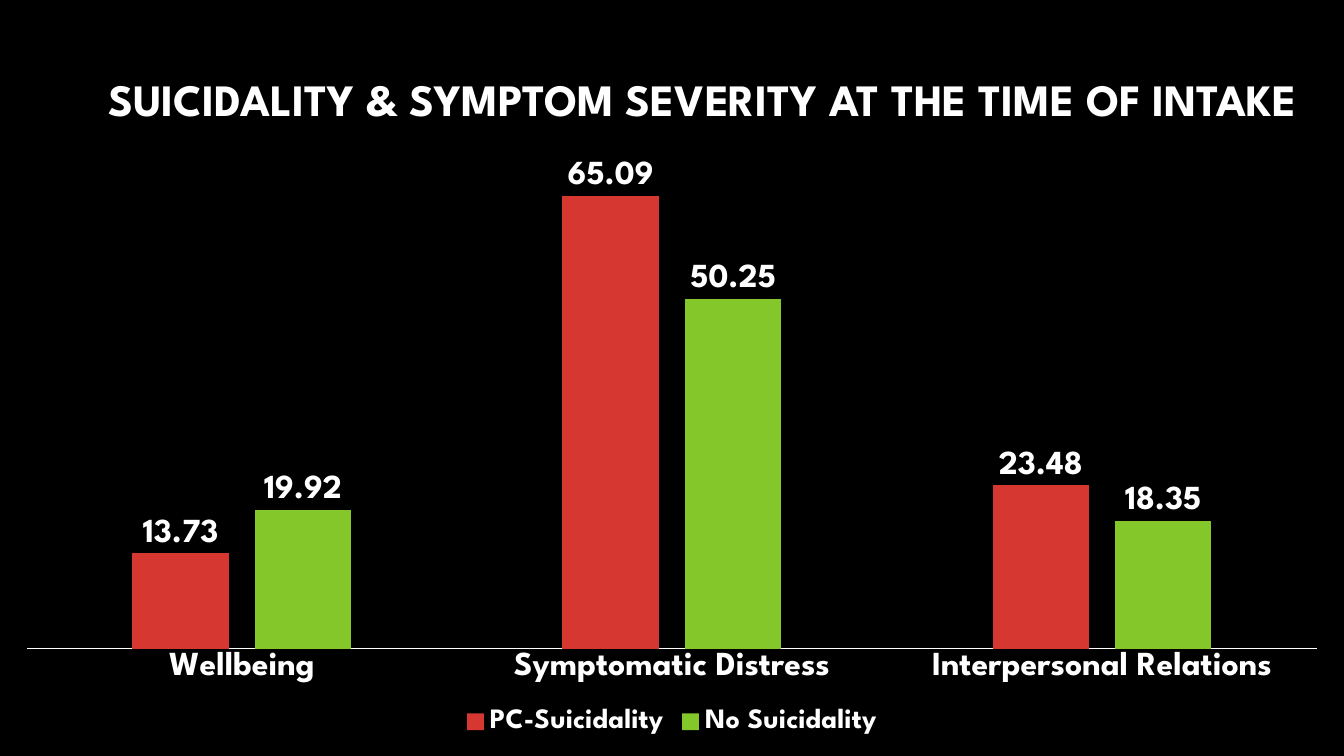
from lxml.etree import SubElement
from pptx import Presentation
from pptx.chart.data import CategoryChartData
from pptx.dml.color import RGBColor
from pptx.enum.chart import XL_CHART_TYPE, XL_LABEL_POSITION, XL_LEGEND_POSITION, XL_TICK_MARK
from pptx.enum.text import MSO_ANCHOR, MSO_AUTO_SIZE, PP_ALIGN
from pptx.oxml.ns import qn
from pptx.util import Cm, Pt

FONT = "League Spartan"
COLOURS = {"background": "000000", "text": "FFFFFF", "suicidality": "D63731", "none": "84C72A"}
CATEGORIES = ["Wellbeing", "Symptomatic Distress", "Interpersonal Relations"]
SERIES = [
    ("PC-Suicidality", [13.73, 65.09, 23.48], "suicidality"),
    ("No Suicidality", [19.92, 50.25, 18.35], "none"),
]


def colour(name):
    return RGBColor.from_string(COLOURS[name])


def style_font(font, size):
    font.name = FONT
    font.size = Pt(size)
    font.bold = True
    font.color.rgb = colour("text")


def add_title(slide, box, text):
    title = slide.shapes.title
    title.left, title.top, title.width, title.height = box
    frame = title.text_frame
    frame.text = text
    frame.word_wrap = True
    frame.auto_size = MSO_AUTO_SIZE.NONE
    frame.vertical_anchor = MSO_ANCHOR.MIDDLE
    para = frame.paragraphs[0]
    para.alignment = PP_ALIGN.RIGHT
    para.line_spacing = 0.9
    style_font(para.runs[0].font, 32)


def place_plot(chart, **fractions):
    plot_area = chart.plots[0]._element.getparent()
    layout = plot_area.find(qn("c:layout"))
    if layout is None:
        layout = SubElement(plot_area, qn("c:layout"))
        plot_area.insert(0, layout)
    manual = SubElement(layout, qn("c:manualLayout"))
    settings = {"layoutTarget": "inner", "xMode": "edge", "yMode": "edge", **fractions}
    for name, value in settings.items():
        SubElement(manual, qn(f"c:{name}")).set("val", str(value))


def add_severity_chart(slide, box):
    data = CategoryChartData(number_format="0.00")
    data.categories = CATEGORIES
    for name, values, _ in SERIES:
        data.add_series(name, values)
    chart = slide.shapes.add_chart(XL_CHART_TYPE.COLUMN_CLUSTERED, *box, data).chart
    style_font(chart.font, 20)
    chart.has_title = False
    chart.has_legend = True
    chart.legend.position = XL_LEGEND_POSITION.BOTTOM
    chart.legend.include_in_layout = False
    style_font(chart.legend.font, 20)

    scale = chart.value_axis
    scale.minimum_scale, scale.maximum_scale = 0, 70
    scale.has_major_gridlines = False
    scale.visible = False
    axis = chart.category_axis
    axis.major_tick_mark = XL_TICK_MARK.NONE
    axis.format.line.color.rgb = colour("text")
    axis.format.line.width = Pt(0.75)
    style_font(axis.tick_labels.font, 24)

    plot = chart.plots[0]
    plot.gap_width, plot.overlap = 219, -27
    plot.vary_by_categories = False
    for series, (_, _, fill) in zip(plot.series, SERIES):
        series.format.fill.solid()
        series.format.fill.fore_color.rgb = colour(fill)
        labels = series.data_labels
        labels.show_value = True
        labels.position = XL_LABEL_POSITION.OUTSIDE_END
        style_font(labels.font, 24)
    place_plot(chart, x=0.02, y=0.02, w=0.96, h=0.825)


def main():
    deck = Presentation()
    deck.slide_width, deck.slide_height = Cm(33.87), Cm(19.05)
    slide = deck.slides.add_slide(deck.slide_layouts[5])
    slide.background.fill.solid()
    slide.background.fill.fore_color.rgb = colour("background")
    add_title(slide, (Cm(0), Cm(0.53), Cm(32.97), Cm(4.06)),
              "SUICIDALITY & SYMPTOM SEVERITY AT THE TIME OF INTAKE")
    add_severity_chart(slide, (Cm(0), Cm(3.78), deck.slide_width, Cm(14.88)))
    deck.save("out.pptx")


if __name__ == "__main__":
    main()
